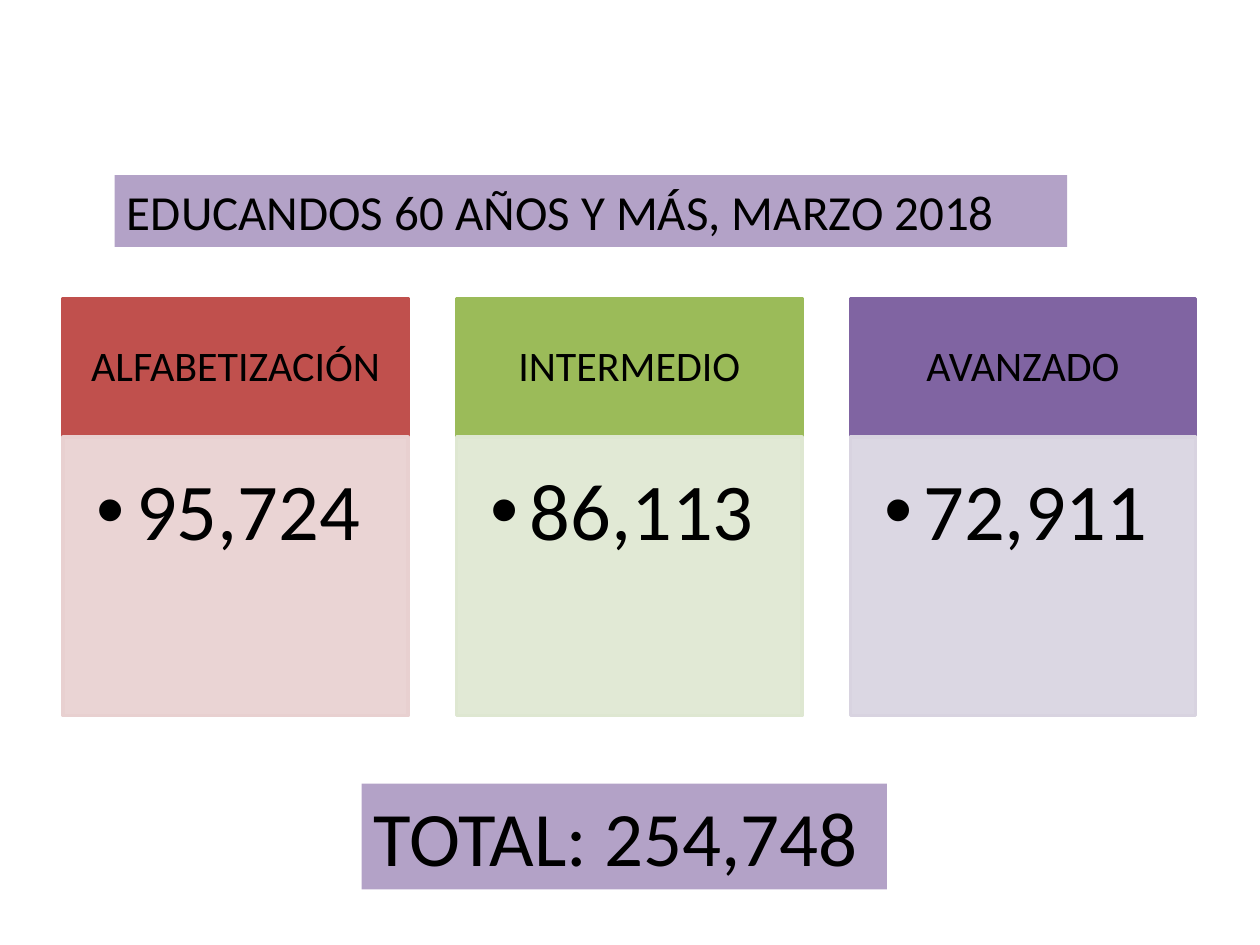
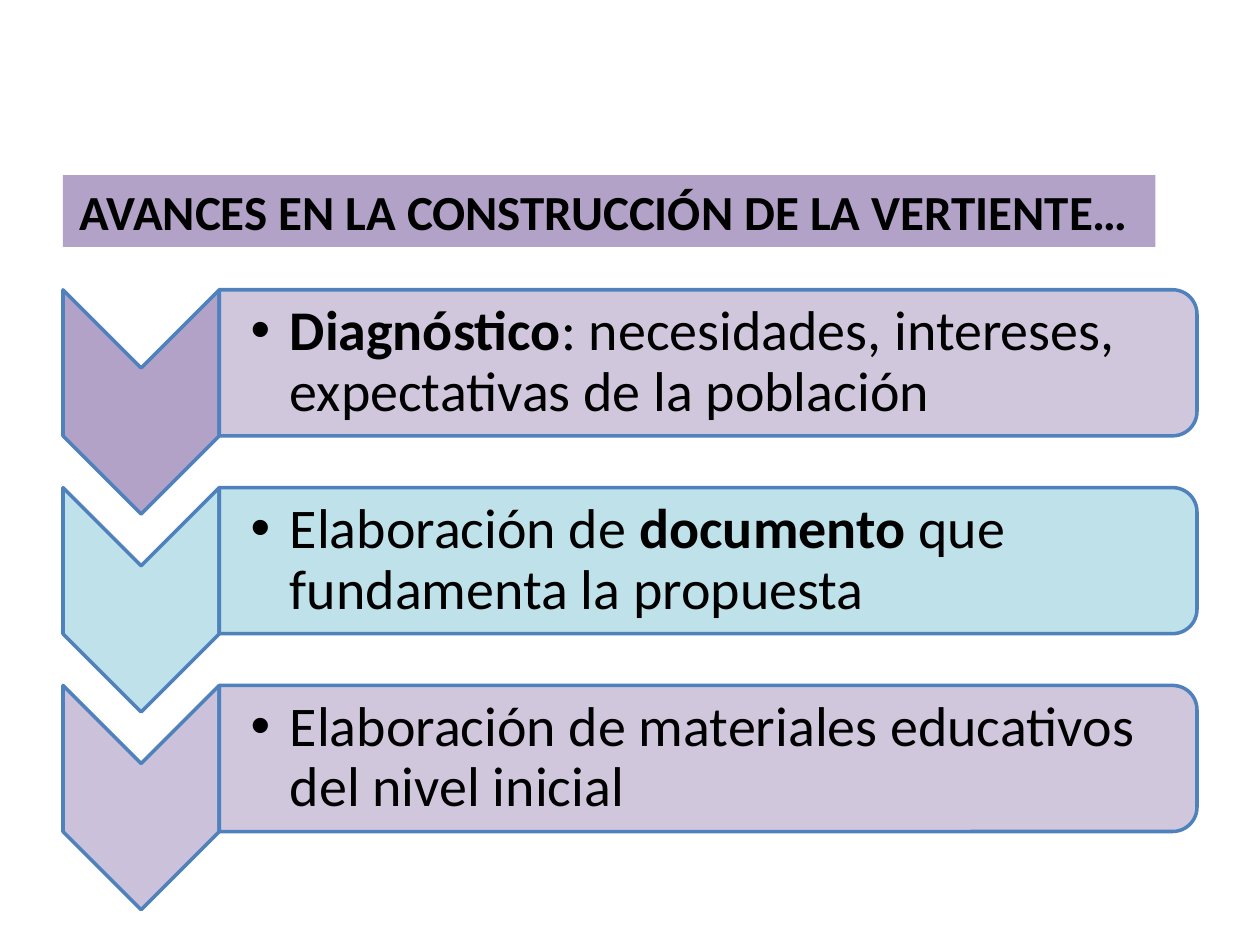
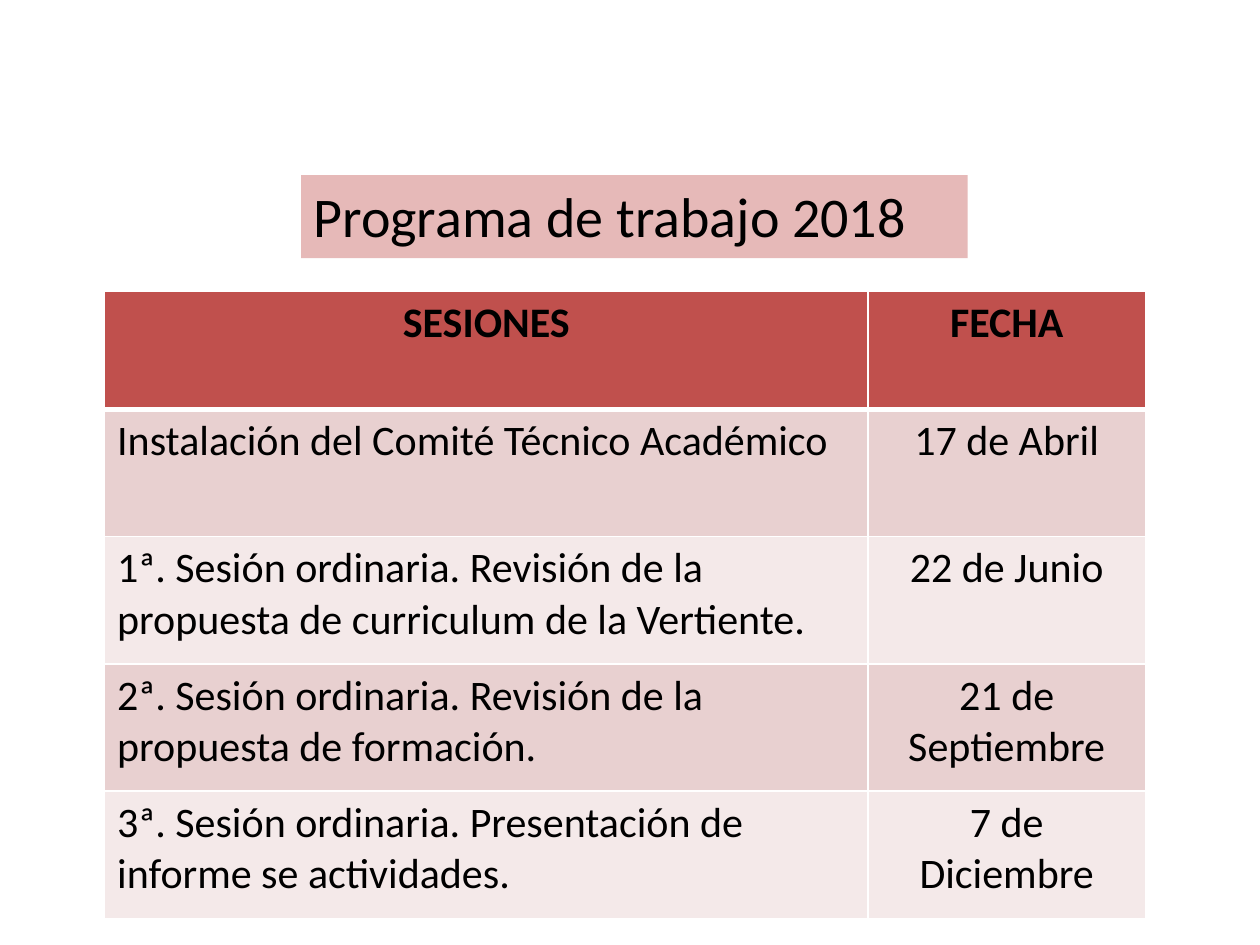
from lxml.etree import SubElement
from pptx import Presentation
from pptx.dml.color import RGBColor
from pptx.enum.shapes import MSO_SHAPE
from pptx.enum.text import MSO_ANCHOR, PP_ALIGN
from pptx.oxml.ns import qn
from pptx.util import Inches, Pt

FONT = "Calibri"
COLORS = {
    "text": "000000", "white": "FFFFFF", "outline": "4F81BD",
    "band": "B3A2C7", "lilac": "CCC1DA", "aqua": "B7DEE8",
    "red": "C0504D", "red_tint": "E8D0D0", "red_pale": "F4E9E9", "rose": "E6B9B8",
    "green": "9BBB59", "green_tint": "DEE7D1",
    "purple": "8064A2", "purple_tint": "D8D3E0",
}
TITLE_TOP = 1.39
DEFAULT_INSETS = (0.1, 0.05, 0.1, 0.05)

LEVELS = [
    ("ALFABETIZACIÓN", "95,724", "red", "red_tint"),
    ("INTERMEDIO", "86,113", "green", "green_tint"),
    ("AVANZADO", "72,911", "purple", "purple_tint"),
]
# Arrow colour, arrow opacity, bar colour, (text, bold) runs
ADVANCES = [
    ("band", 100, "lilac",
     [("Diagnóstico", True),
      (": necesidades, intereses, expectativas de la población", False)]),
    ("aqua", 90, "aqua",
     [("Elaboración de ", False), ("documento", True),
      (" que fundamenta la propuesta", False)]),
    ("lilac", 100, "lilac",
     [("Elaboración de materiales educativos del nivel inicial", False)]),
]
SESSIONS = [
    ("SESIONES", "FECHA"),
    ("Instalación del Comité Técnico Académico", "17 de Abril"),
    ("1ª. Sesión ordinaria. Revisión de la propuesta de curriculum de la Vertiente.",
     "22 de Junio"),
    ("2ª. Sesión ordinaria. Revisión de la propuesta de formación.", "21 de Septiembre"),
    ("3ª. Sesión ordinaria. Presentación de informe se actividades.", "7 de Diciembre"),
]


def rgb(name):
    return RGBColor.from_string(COLORS[name])


def add_block(slide, kind, box, fill, line=None, opacity=100, turned=False):
    """Place a filled shape; a turned one is rotated 90° and still covers box."""
    left, top, width, height = box
    if turned:
        left, top = left + (width - height) / 2, top + (height - width) / 2
        width, height = height, width
    block = slide.shapes.add_shape(kind, *map(Inches, (left, top, width, height)))
    block.shadow.inherit = False
    block.rotation = 90 if turned else 0
    block.fill.solid()
    block.fill.fore_color.rgb = rgb(fill)
    if opacity < 100:
        tint = block._element.spPr.find(qn("a:solidFill")).find(qn("a:srgbClr"))
        SubElement(tint, qn("a:alpha"), val=str(opacity * 1000))
    if line:
        block.line.color.rgb = rgb(line)
        block.line.width = Pt(2)
    else:
        block.line.fill.background()
    return block


def write(frame, runs, size, align=PP_ALIGN.LEFT, anchor=MSO_ANCHOR.TOP,
          insets=DEFAULT_INSETS, spacing=None, bullet=False):
    frame.word_wrap = True
    frame.vertical_anchor = anchor
    frame.margin_left, frame.margin_top, frame.margin_right, frame.margin_bottom = map(
        Inches, insets)
    paragraph = frame.paragraphs[0]
    paragraph.alignment = align
    if spacing:
        paragraph.line_spacing = spacing
    if bullet:
        properties = paragraph._p.get_or_add_pPr()
        properties.set("marL", str(Inches(0.31)))
        properties.set("indent", str(Inches(-0.31)))
        SubElement(properties, qn("a:buFont"), typeface="Arial")
        SubElement(properties, qn("a:buChar"), char="•")
    for text, bold in runs:
        run = paragraph.add_run()
        run.text = text
        run.font.name = FONT
        run.font.size = Pt(size)
        run.font.bold = bold
        run.font.color.rgb = rgb("text")


def add_band(slide, box, text, size, fill="band", bold=False, align=PP_ALIGN.LEFT):
    band = add_block(slide, MSO_SHAPE.RECTANGLE, box, fill)
    write(band.text_frame, [(text, bold)], size, align)


def add_level_card(slide, box, level, count, head_color, body_color):
    left, top, width, height = box
    head_height = 1.1
    head = add_block(slide, MSO_SHAPE.RECTANGLE, (left, top, width, head_height),
                     head_color, head_color)
    write(head.text_frame, [(level, False)], 24, PP_ALIGN.CENTER, MSO_ANCHOR.MIDDLE,
          (0.19, 0.11, 0.19, 0.11), 0.9)
    body = add_block(slide, MSO_SHAPE.RECTANGLE,
                     (left, top + head_height, width, height - head_height),
                     body_color, body_color, 90)
    write(body.text_frame, [(count, False)], 46, insets=(0.27, 0.27, 0.36, 0.4),
          spacing=0.9, bullet=True)


def add_advance(slide, box, arrow_color, arrow_opacity, bar_color, runs):
    left, top, width, height = box
    arrow_width, bar_height = 1.24, 1.16
    bar_left, bar_width = left + arrow_width, width - arrow_width
    add_block(slide, MSO_SHAPE.CHEVRON, (left, top, arrow_width, height),
              arrow_color, "outline", arrow_opacity, turned=True)
    add_block(slide, MSO_SHAPE.ROUND_2_SAME_RECTANGLE,
              (bar_left, top, bar_width, bar_height), bar_color, "outline", 90, turned=True)
    caption = slide.shapes.add_textbox(
        *map(Inches, (bar_left, top + 0.06, bar_width - 0.06, bar_height - 0.12)))
    write(caption.text_frame, runs, 32, anchor=MSO_ANCHOR.MIDDLE,
          insets=(0.25, 0.02, 0.02, 0.02), spacing=0.9, bullet=True)


def set_borders(cell, top, bottom):
    for edge, weight in (("lnL", 1), ("lnR", 1), ("lnT", top), ("lnB", bottom)):
        line = SubElement(cell._tc.get_or_add_tcPr(), qn(f"a:{edge}"), w=str(Pt(weight)))
        SubElement(SubElement(line, qn("a:solidFill")), qn("a:srgbClr"), val=COLORS["white"])


def add_sessions_table(slide, box):
    table = slide.shapes.add_table(len(SESSIONS), 2, *map(Inches, box)).table
    table.horz_banding = False
    date_width, head_height = 2.2, 0.94
    table.columns[0].width = Inches(box[2] - date_width)
    table.columns[1].width = Inches(date_width)
    row_height = (box[3] - head_height) / (len(SESSIONS) - 1)
    for r, texts in enumerate(SESSIONS):
        is_head = r == 0
        table.rows[r].height = Inches(head_height if is_head else row_height)
        fill = "red" if is_head else ("red_pale", "red_tint")[r % 2]
        for c, text in enumerate(texts):
            cell = table.cell(r, c)
            set_borders(cell, 3 if r == 1 else 1, 3 if is_head else 1)
            cell.fill.solid()
            cell.fill.fore_color.rgb = rgb(fill)
            centred = is_head or c == 1
            write(cell.text_frame, [(text, is_head)], 24,
                  PP_ALIGN.CENTER if centred else PP_ALIGN.LEFT)


def build_learners(slide):
    for i, level in enumerate(LEVELS):
        add_level_card(slide, (0.5 + i * 3.125, 2.37, 2.74, 3.31), *level)
    add_band(slide, (0.91, TITLE_TOP, 7.56, 0.57), "EDUCANDOS 60 AÑOS Y MÁS, MARZO 2018", 28)
    add_band(slide, (2.87, 6.22, 4.17, 0.84), "TOTAL: 254,748", 44)


def build_advances(slide):
    for i, advance in enumerate(ADVANCES):
        add_advance(slide, (0.5, 2.3 + i * 1.57, 9, 1.78), *advance)
    add_band(slide, (0.5, TITLE_TOP, 8.67, 0.57),
             "AVANCES EN LA CONSTRUCCIÓN DE LA VERTIENTE… ", 28,
             bold=True, align=PP_ALIGN.CENTER)


def build_programme(slide):
    add_band(slide, (2.39, TITLE_TOP, 5.29, 0.66), "Programa de trabajo 2018", 32, "rose")
    add_sessions_table(slide, (0.83, 2.31, 8.26, 4.98))


def main():
    deck = Presentation()
    deck.slide_width, deck.slide_height = Inches(10), Inches(7.5)
    for build in (build_learners, build_advances, build_programme):
        build(deck.slides.add_slide(deck.slide_layouts[6]))
    deck.save("out.pptx")


if __name__ == "__main__":
    main()
